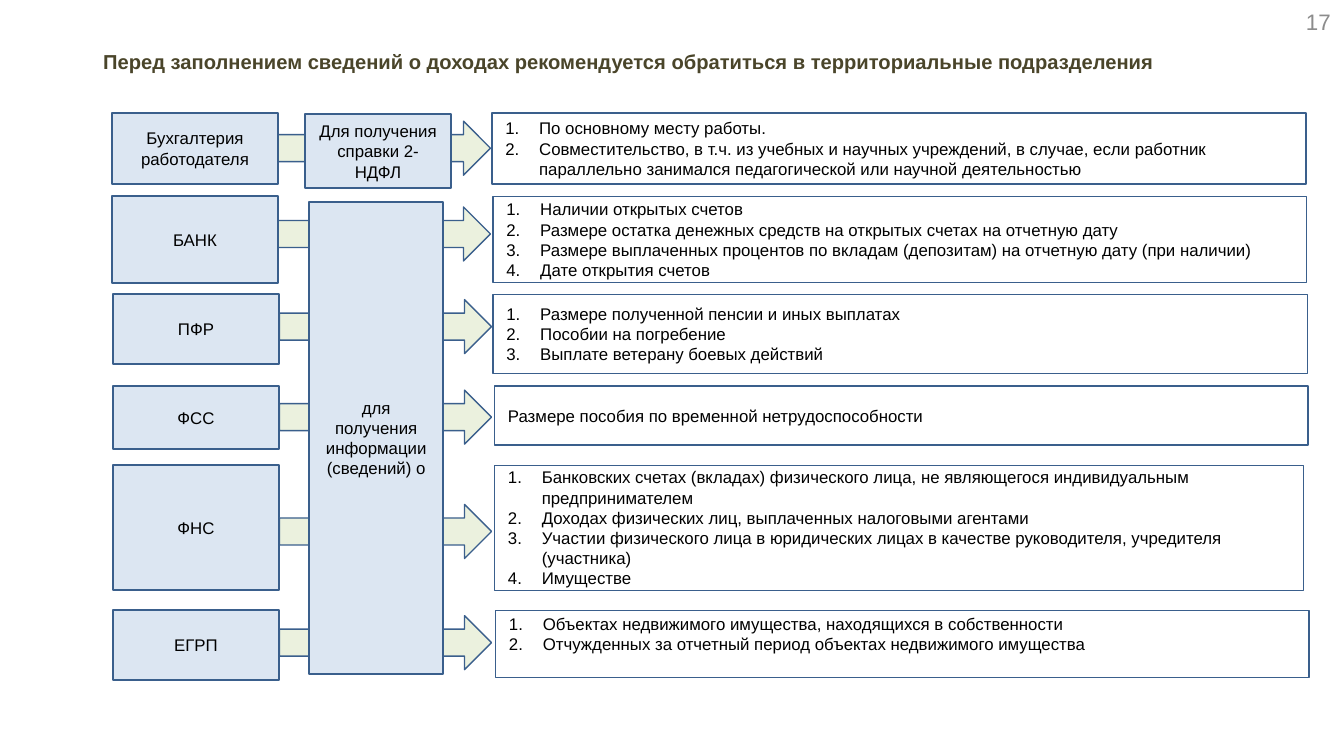
"""Build a slide on where to ask for income data before filing."""
from lxml import etree
from pptx import Presentation
from pptx.dml.color import RGBColor
from pptx.enum.shapes import MSO_SHAPE
from pptx.enum.text import MSO_ANCHOR, PP_ALIGN
from pptx.oxml.ns import qn
from pptx.util import Cm, Pt

RECT, FLOW, ARROW = MSO_SHAPE.RECTANGLE, MSO_SHAPE.FLOWCHART_PROCESS, MSO_SHAPE.RIGHT_ARROW
LEFT, MID, RIGHT = PP_ALIGN.LEFT, PP_ALIGN.CENTER, PP_ALIGN.RIGHT
BLUE = RGBColor(0xDC, 0xE6, 0xF2)
GREEN = RGBColor(0xEB, 0xF1, 0xDE)
WHITE = RGBColor(0xFF, 0xFF, 0xFF)
EDGE = RGBColor(0x3A, 0x5F, 0x8C)
BLACK = RGBColor(0, 0, 0)
OLIVE = RGBColor(0x4A, 0x45, 0x2A)
GREY = RGBColor(0x8C, 0x8C, 0x8C)

TITLE = "Перед заполнением сведений о доходах рекомендуется обратиться в территориальные подразделения"
PAGE = "17"
ROWS = [
    dict(name="Бухгалтерия работодателя", form=RECT, x=2.11, y=2.13, tall=1.35,
         out=(9.3, 15.39, 1.35), edge=1, tip=2.29, facts=[
             "По основному месту работы.",
             "Совместительство, в т.ч. из учебных и научных учреждений, в случае, если работник "
             "параллельно занимался педагогической или научной деятельностью"]),
    dict(name="БАНК", x=2.11, y=3.71, tall=1.63, out=(9.32, 15.37, 1.63), tip=3.91, facts=[
        "Наличии открытых счетов",
        "Размере остатка денежных средств на открытых счетах на отчетную дату",
        "Размере выплаченных процентов по вкладам (депозитам) на отчетную дату (при наличии)",
        "Дате открытия счетов"]),
    dict(name="ПФР", x=2.13, y=5.56, tall=1.32, out=(9.32, 15.39, 1.5), tip=5.66, facts=[
        "Размере полученной пенсии и иных выплатах",
        "Пособии на погребение",
        "Выплате ветерану боевых действий"]),
    dict(name="ФСС", x=2.13, y=7.29, tall=1.19, out=(9.35, 15.37, 1.12), tip=7.37, facts=[
        "Размере пособия по временной нетрудоспособности"]),
    dict(name="ФНС", x=2.13, y=8.79, tall=2.36, out=(9.35, 15.29, 2.36), tip=9.53, facts=[
        "Банковских счетах (вкладах) физического лица, не являющегося индивидуальным предпринимателем",
        "Доходах физических лиц, выплаченных налоговыми агентами",
        "Участии физического лица в юридических лицах в качестве руководителя, учредителя (участника)",
        "Имуществе"]),
    dict(name="ЕГРП", x=2.13, y=11.53, tall=1.32, out=(9.37, 15.37, 1.27), tip=11.63, foot=0.5, facts=[
        "Объектах недвижимого имущества, находящихся в собственности",
        "Отчужденных за отчетный период объектах недвижимого имущества"]),
]
GOALS = [
    (FLOW, (5.77, 2.16, 2.75, 1.4), "Для получения справки 2-НДФЛ"),
    (RECT, (5.84, 3.81, 2.54, 8.92), "для получения информации (сведений) о"),
]
WIDE = 3.15
DENT = Cm(0.64)


def write(shape, *lines, size=9, color=BLACK, bold=False, align=LEFT, foot=0.13):
    frame = shape.text_frame
    frame.word_wrap = True
    frame.vertical_anchor = MSO_ANCHOR.MIDDLE
    frame.margin_bottom = Cm(foot)
    for i, line in enumerate(lines):
        para = frame.paragraphs[0] if i == 0 else frame.add_paragraph()
        para.alignment = align
        if len(lines) > 1:
            props = para._p.get_or_add_pPr()
            props.set("marL", str(DENT))
            props.set("indent", str(-DENT))
            etree.SubElement(props, qn("a:buFont"), typeface="+mj-lt")
            etree.SubElement(props, qn("a:buAutoNum"), type="arabicPeriod")
        run = para.add_run()
        run.text = line
        font = run.font
        font.name, font.size, font.bold = "Arial", Pt(size), bold
        font.color.rgb = color


def draw(form, area, fill, edge):
    shape = slide.shapes.add_shape(form, *map(Cm, area))
    shape.shadow.inherit = False
    shape.fill.solid()
    shape.fill.fore_color.rgb = fill
    shape.line.color.rgb = EDGE
    shape.line.width = Pt(edge)
    return shape


deck = Presentation()
deck.slide_width, deck.slide_height = Cm(25.4), Cm(14.28)
slide = deck.slides.add_slide(deck.slide_layouts[6])

head = slide.shapes.add_textbox(Cm(1.7), Cm(0.58), Cm(22.43), Cm(1.17))
write(head, TITLE, size=10.8, color=OLIVE, bold=True)
page = slide.shapes.add_textbox(Cm(19.48), Cm(0.03), Cm(5.92), Cm(0.76))
write(page, PAGE, size=12, color=GREY, align=RIGHT)

for row in ROWS:
    box = draw(row.get("form", FLOW), (row["x"], row["y"], WIDE, row["tall"]), BLUE, 1)
    write(box, row["name"], align=MID)
    left, wide, tall = row["out"]
    box = draw(FLOW, (left, row["y"], wide, tall), WHITE, row.get("edge", 0.75))
    write(box, *row["facts"], foot=row.get("foot", 0.13))

for row in ROWS:
    draw(ARROW, (row["x"] + WIDE, row["tip"], 4.01, 1.02), GREEN, 0.75)

for form, area, goal in GOALS:
    write(draw(form, area, BLUE, 1), goal, align=MID)

deck.save("out.pptx")
